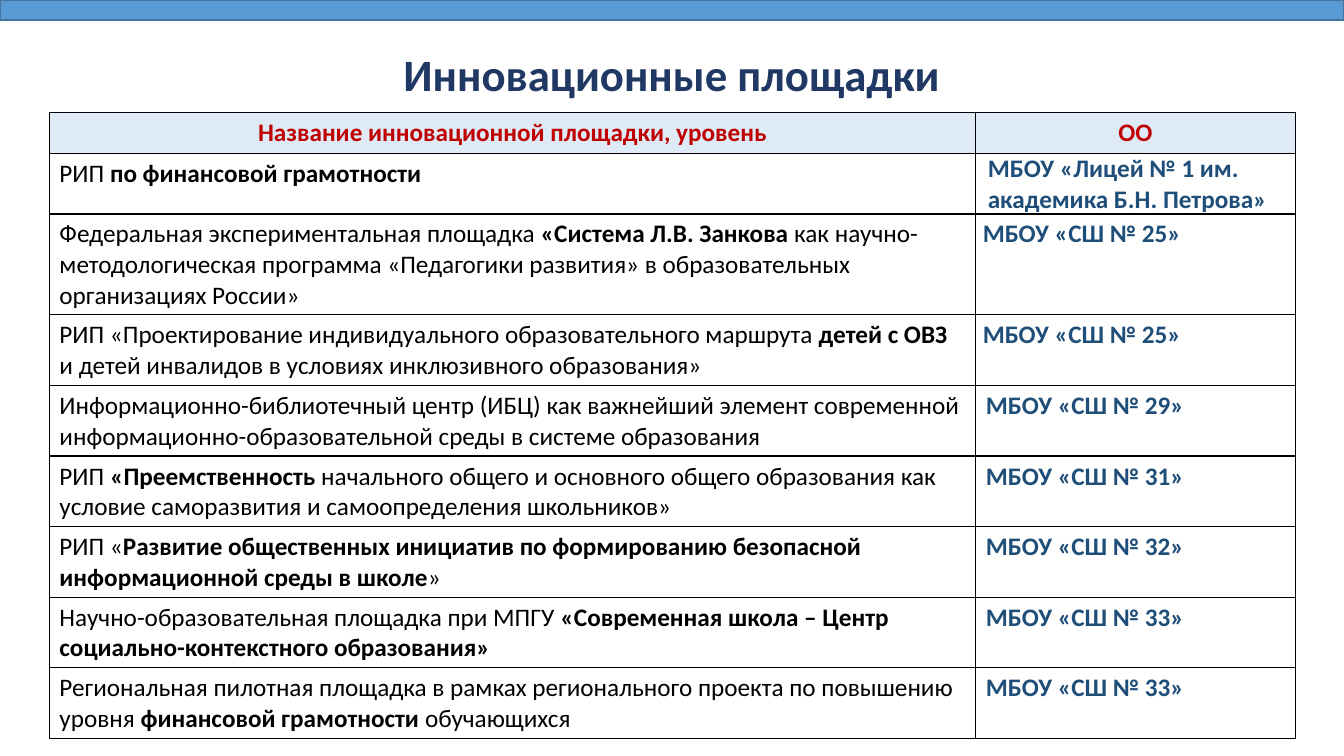
from lxml import etree
from pptx import Presentation
from pptx.dml.color import RGBColor
from pptx.enum.shapes import MSO_SHAPE
from pptx.enum.text import MSO_ANCHOR, PP_ALIGN
from pptx.oxml.ns import qn
from pptx.util import Pt

RECTANGLE = MSO_SHAPE.RECTANGLE
MIDDLE = MSO_ANCHOR.MIDDLE
CENTER = PP_ALIGN.CENTER
LEFT = PP_ALIGN.LEFT

FONT = "Calibri"
BLACK = "000000"
NAVY = "1F4E79"
RED = "C00000"
HEADER_FILL = "DEEBF7"

NORMAL_INSETS = (7.2, 3.6)
WIDE_INSETS = (8.64, 0)
NARROW_INSETS = (5.04, 0)

COLUMN_WIDTHS = (661.68, 228.24)
ROW_HEIGHT = 29.2
HEADERS = ("Название инновационной площадки, уровень", "ОО")

# Platform with bold parts between ** marks, school, school cell insets, line spacing
PLATFORMS = [
    ("РИП **по финансовой грамотности**",
     "МБОУ «Лицей № 1 им. академика Б.Н. Петрова»", WIDE_INSETS, 1),
    ("Федеральная экспериментальная площадка **«Система Л.В. Занкова **как "
     "научно-методологическая программа «Педагогики развития» в образовательных "
     "организациях России»", "МБОУ «СШ № 25»", NARROW_INSETS, 1.15),
    ("РИП «Проектирование индивидуального образовательного маршрута **детей с ОВЗ **"
     "и детей инвалидов в условиях инклюзивного образования»",
     "МБОУ «СШ № 25»", NARROW_INSETS, 1.15),
    ("Информационно-библиотечный центр (ИБЦ) как важнейший элемент современной "
     "информационно-образовательной среды в системе образования",
     "МБОУ «СШ № 29»", NORMAL_INSETS, 1),
    ("РИП **«Преемственность **начального общего и основного общего образования как "
     "условие саморазвития и самоопределения школьников»",
     "МБОУ «СШ № 31»", NORMAL_INSETS, 1),
    ("РИП «**Развитие общественных инициатив по формированию безопасной "
     "информационной среды в школе**»", "МБОУ «СШ № 32»", NORMAL_INSETS, 1),
    ("Научно-образовательная площадка при МПГУ **«Современная школа – Центр "
     "социально-контекстного образования»**", "МБОУ «СШ № 33»", NORMAL_INSETS, 1),
    ("Региональная пилотная площадка в рамках регионального проекта по повышению "
     "уровня **финансовой грамотности **обучающихся",
     "МБОУ «СШ № 33»", NORMAL_INSETS, 1),
]


def rgb(color):
    return RGBColor.from_string(color)


def write(para, text, size, color, align=LEFT, spacing=1):
    """Fill a paragraph, with the parts between ** marks in bold."""
    para.alignment = align
    para.line_spacing = spacing
    for index, part in enumerate(text.split("**")):
        if part:
            span = para.add_run()
            span.text = part
            span.font.name = FONT
            span.font.size = Pt(size)
            span.font.bold = index % 2 == 1
            span.font.color.rgb = rgb(color)


def add_top_band(page, width):
    band = page.shapes.add_shape(RECTANGLE, 0, 0, width, Pt(14.4))
    band.shadow.inherit = False
    band.fill.solid()
    band.fill.fore_color.rgb = rgb("5B9BD5")
    band.line.color.rgb = rgb("43739E")
    band.line.width = Pt(1)


def add_title(page, text):
    box = page.shapes.add_textbox(Pt(66), Pt(28.8), Pt(828), Pt(51.84))
    frame = box.text_frame
    frame.word_wrap = True
    frame.vertical_anchor = MIDDLE
    write(frame.paragraphs[0], f"**{text}**", 32, "203864", CENTER, 0.9)


def add_borders(cell):
    properties = cell._tc.get_or_add_tcPr()
    for side in ("a:lnL", "a:lnR", "a:lnT", "a:lnB"):
        line = etree.SubElement(properties, qn(side), w=str(Pt(1)))
        fill = etree.SubElement(line, qn("a:solidFill"))
        etree.SubElement(fill, qn("a:srgbClr"), val=BLACK)


def fill_cell(cell, text, color, fill=None, insets=NORMAL_INSETS, align=LEFT, spacing=1):
    side, top = insets
    cell.margin_left = cell.margin_right = Pt(side)
    cell.margin_top = cell.margin_bottom = Pt(top)
    add_borders(cell)
    if fill:
        cell.fill.solid()
        cell.fill.fore_color.rgb = rgb(fill)
    else:
        cell.fill.background()
    write(cell.text_frame.paragraphs[0], text, 18, color, align, spacing)


def add_platform_table(page):
    row_count = len(PLATFORMS) + 1
    frame = page.shapes.add_table(row_count, len(HEADERS), Pt(35.28), Pt(80.4),
                                  Pt(sum(COLUMN_WIDTHS)), Pt(ROW_HEIGHT * row_count))
    table = frame.table
    table.first_row = table.horz_banding = False
    for column, width in zip(table.columns, COLUMN_WIDTHS):
        column.width = Pt(width)
    for row in table.rows:
        row.height = Pt(ROW_HEIGHT)
    for index, header in enumerate(HEADERS):
        fill_cell(table.cell(0, index), f"**{header}**", RED, HEADER_FILL, align=CENTER)
    for index, (platform, school, insets, spacing) in enumerate(PLATFORMS, start=1):
        fill_cell(table.cell(index, 0), platform, BLACK)
        fill_cell(table.cell(index, 1), f"**{school}**", NAVY, insets=insets, spacing=spacing)


def main():
    deck = Presentation()
    deck.slide_width = Pt(960)
    deck.slide_height = Pt(540)
    page = deck.slides.add_slide(deck.slide_layouts[6])
    add_title(page, "Инновационные площадки")
    add_top_band(page, deck.slide_width)
    add_platform_table(page)
    deck.save("out.pptx")


if __name__ == "__main__":
    main()
